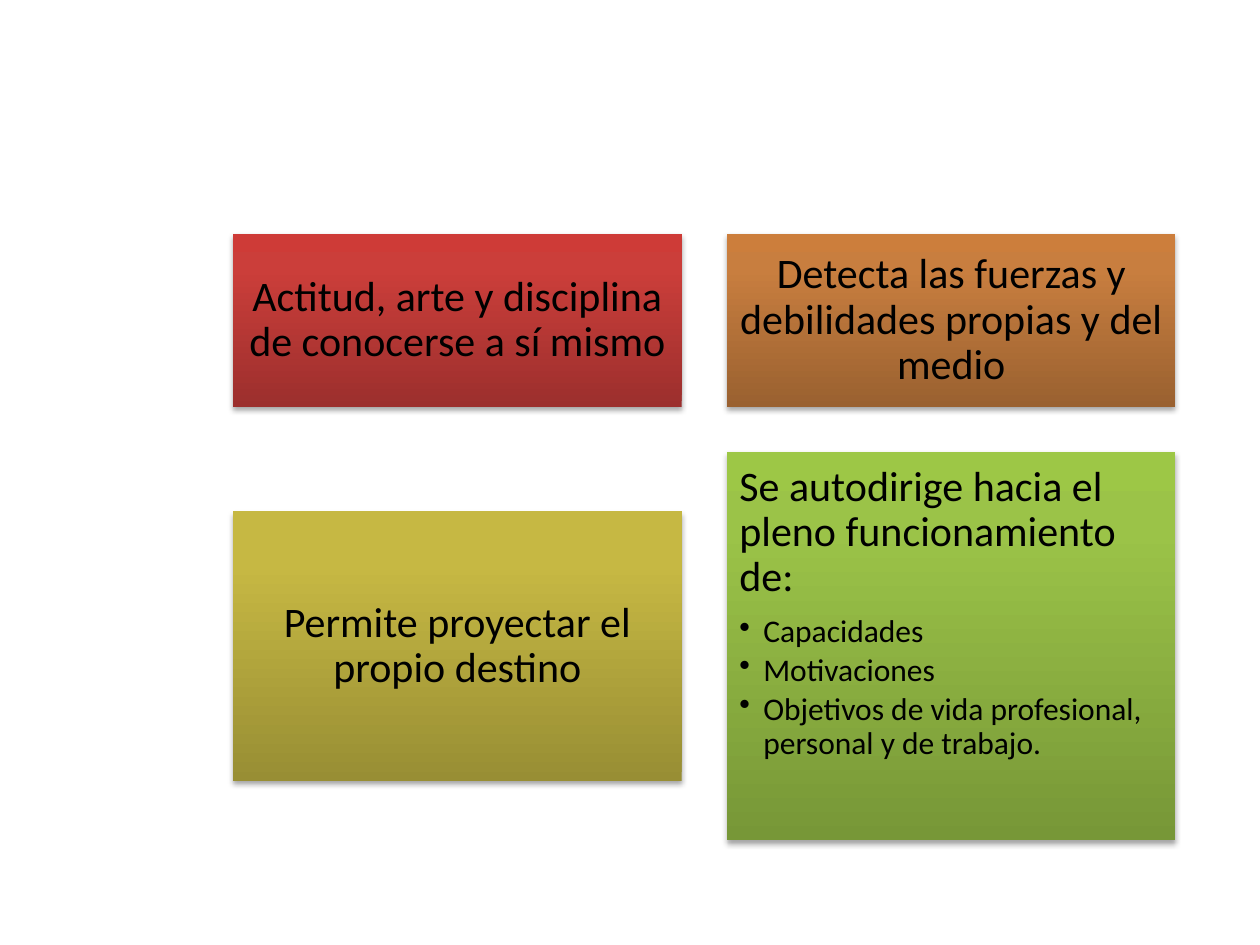
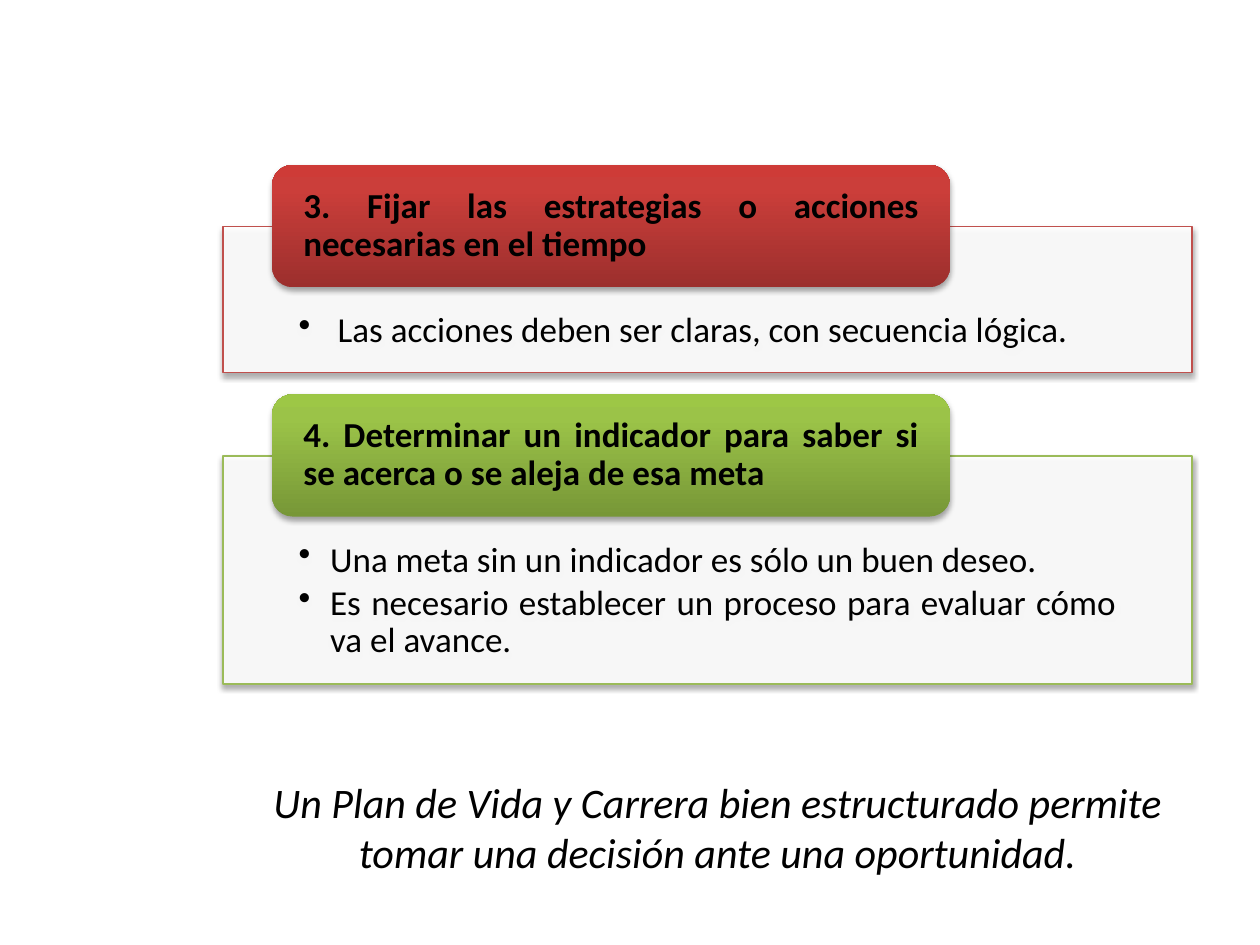
"""Builds two slides on planning life and career: its traits and its last two steps."""
from pptx import Presentation
from pptx.dml.color import RGBColor
from pptx.enum.shapes import MSO_SHAPE as Preset
from pptx.enum.text import MSO_ANCHOR as Anchor, PP_ALIGN as Align
from pptx.oxml import parse_xml
from pptx.oxml.ns import nsdecls
from pptx.util import Inches, Pt

COLORS = {"text": "000000", "panel": "FFFFFF", "red_line": "C0504D", "green_line": "9BBB59"}
GRADIENTS = {
    "red": ("9C2F2D", "CB3E3A", "CE3B37"),
    "orange": ("9A6130", "C87E3F", "CC7E3C"),
    "yellow": ("988E34", "C6B843", "C9BB41"),
    "green": ("779737", "9BC348", "9DC746"),
}
GRADIENT_STOPS = (0, 80, 100)
FONT = "Calibri"

TRAIT_ROWS = [
    {"height": 1.37, "traits": [
        {"text": "Actitud, arte y disciplina de conocerse a sí mismo", "color": "red"},
        {"text": "Detecta las fuerzas y debilidades propias y del medio", "color": "orange"},
    ]},
    {"height": 3.08, "traits": [
        {"text": "Permite proyectar el propio destino", "color": "yellow", "height": 2.14},
        {"text": "Se autodirige hacia el pleno funcionamiento de:", "color": "green",
         "points": ["Capacidades", "Motivaciones",
                    "Objetivos de vida profesional, personal y de trabajo."]},
    ]},
]
STEPS = [
    {"title": "3. Fijar las estrategias o acciones necesarias en el tiempo",
     "color": "red", "height": 1.16, "indent": 0.31,
     "points": ["Las acciones deben ser claras, con secuencia lógica."]},
    {"title": "4. Determinar un indicador para saber si se acerca o se aleja de esa meta",
     "color": "green", "height": 1.81, "indent": 0.25,
     "points": ["Una meta sin un indicador es sólo un buen deseo.",
                "Es necesario establecer un proceso para evaluar cómo va el avance."]},
]
CLOSING = ("Un Plan de Vida y Carrera bien estructurado permite "
           "tomar una decisión ante una oportunidad.")

TRAIT_LEFT, TRAIT_TOP, TRAIT_WIDTH, TRAIT_GAP = 1.85, 1.86, 3.56, 0.36
PANEL_LEFT, PANEL_TOP, PANEL_WIDTH, PANEL_GAP = 1.77, 1.8, 7.69, 0.66
HEADER_SHIFT, HEADER_RISE, HEADER_WIDTH, HEADER_HEIGHT = 0.39, 0.49, 5.38, 0.97


def add_block(slide, preset, box, insets, anchor):
    block = slide.shapes.add_shape(preset, *map(Inches, box))
    frame = block.text_frame
    frame.word_wrap = True
    frame.vertical_anchor = anchor
    (frame.margin_left, frame.margin_top,
     frame.margin_right, frame.margin_bottom) = map(Inches, insets)
    return block


def add_shadow(block):
    block._element.spPr.append(parse_xml(
        f'<a:effectLst {nsdecls("a")}><a:outerShdw blurRad="40000" dist="23000" dir="5400000" '
        'rotWithShape="0"><a:srgbClr val="000000"><a:alpha val="35000"/></a:srgbClr>'
        '</a:outerShdw></a:effectLst>'))


def paint_gradient(block, color):
    stops = "".join(f'<a:gs pos="{position * 1000}"><a:srgbClr val="{shade}"/></a:gs>'
                    for position, shade in zip(GRADIENT_STOPS, GRADIENTS[color]))
    block._element.spPr.append(parse_xml(
        f'<a:gradFill {nsdecls("a")} rotWithShape="1"><a:gsLst>{stops}</a:gsLst>'
        '<a:lin ang="16200000" scaled="0"/></a:gradFill>'))
    block.line.fill.background()
    add_shadow(block)


def paint_panel(panel, color):
    panel.fill.solid()
    panel.fill.fore_color.rgb = RGBColor.from_string(COLORS["panel"])
    shade = panel._element.spPr.find(".//{*}solidFill/{*}srgbClr")
    shade.append(parse_xml(f'<a:alpha {nsdecls("a")} val="90000"/>'))
    panel.line.color.rgb = RGBColor.from_string(COLORS[f"{color}_line"])
    panel.line.width = Pt(0.75)
    add_shadow(panel)


def write(paragraph, text, size, align, bold=False, italic=False):
    paragraph.text = text
    paragraph.alignment = align
    for run in paragraph.runs:
        run.font.name, run.font.size = FONT, Pt(size)
        run.font.bold, run.font.italic = bold, italic
        run.font.color.rgb = RGBColor.from_string(COLORS["text"])


def write_tight(paragraph, text, size, align, after=0.35, bold=False):
    write(paragraph, text, size, align, bold)
    paragraph.line_spacing = 0.9
    paragraph.space_after = Pt(size * after)


def write_point(paragraph, text, size, align, indent):
    properties = paragraph._p.get_or_add_pPr()
    properties.set("marL", str(Inches(indent)))
    properties.set("indent", str(-Inches(indent)))
    properties.append(parse_xml(f'<a:buChar {nsdecls("a")} char="•"/>'))
    write_tight(paragraph, text, size, align, after=0.15)


def add_trait(slide, trait, left, row_top, row_height):
    height = trait.get("height", row_height)
    points = trait.get("points", [])
    block = add_block(slide, Preset.RECTANGLE,
                      (left, row_top + (row_height - height) / 2, TRAIT_WIDTH, height),
                      [0.1] * 4, Anchor.TOP if points else Anchor.MIDDLE)
    paint_gradient(block, trait["color"])
    frame = block.text_frame
    write_tight(frame.paragraphs[0], trait["text"], 24, Align.LEFT if points else Align.CENTER)
    for point in points:
        write_point(frame.add_paragraph(), point, 18, Align.LEFT, 0.19)


def add_step(slide, step, top):
    panel = add_block(slide, Preset.RECTANGLE, (PANEL_LEFT, top, PANEL_WIDTH, step["height"]),
                      (0.6, 0.68, 0.6, 0.16), Anchor.TOP)
    paint_panel(panel, step["color"])
    frame = panel.text_frame
    for number, point in enumerate(step["points"]):
        paragraph = frame.add_paragraph() if number else frame.paragraphs[0]
        write_point(paragraph, point, 20, Align.JUSTIFY, step["indent"])
    header = add_block(slide, Preset.ROUNDED_RECTANGLE,
                       (PANEL_LEFT + HEADER_SHIFT, top - HEADER_RISE, HEADER_WIDTH, HEADER_HEIGHT),
                       (0.2, 0, 0.2, 0), Anchor.MIDDLE)
    paint_gradient(header, step["color"])
    write_tight(header.text_frame.paragraphs[0], step["title"], 20, Align.JUSTIFY, bold=True)


def build_traits(slide):
    top = TRAIT_TOP
    for row in TRAIT_ROWS:
        for column, trait in enumerate(row["traits"]):
            left = TRAIT_LEFT + column * (TRAIT_WIDTH + TRAIT_GAP)
            add_trait(slide, trait, left, top, row["height"])
        top += row["height"] + TRAIT_GAP


def build_steps(slide):
    top = PANEL_TOP
    for step in STEPS:
        add_step(slide, step, top)
        top += step["height"] + PANEL_GAP
    closing = slide.shapes.add_textbox(Inches(1.93), Inches(6.11), Inches(7.53), Inches(0.91))
    closing.text_frame.word_wrap = True
    write(closing.text_frame.paragraphs[0], CLOSING, 24, Align.CENTER, italic=True)


def main():
    deck = Presentation()
    deck.slide_width, deck.slide_height = Inches(10), Inches(7.5)
    for build in (build_traits, build_steps):
        build(deck.slides.add_slide(deck.slide_layouts[6]))
    deck.save("out.pptx")


if __name__ == "__main__":
    main()
